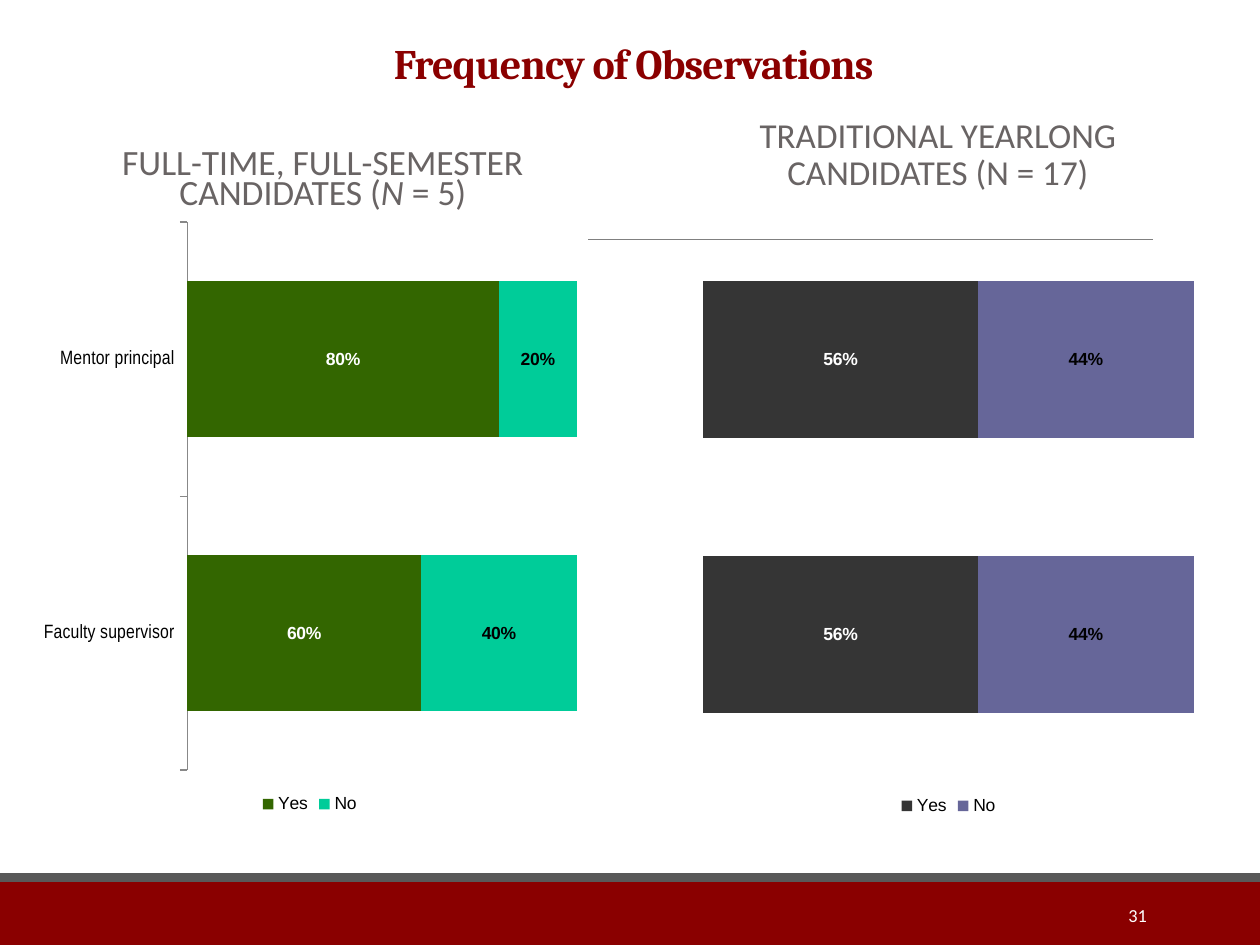
from lxml import etree
from pptx import Presentation
from pptx.chart.data import CategoryChartData
from pptx.dml.color import RGBColor
from pptx.enum.chart import XL_CHART_TYPE, XL_LABEL_POSITION, XL_LEGEND_POSITION, XL_TICK_MARK
from pptx.enum.shapes import MSO_CONNECTOR, MSO_SHAPE
from pptx.enum.text import MSO_ANCHOR, PP_ALIGN
from pptx.oxml import parse_xml
from pptx.oxml.ns import nsdecls, qn
from pptx.util import Pt

BAR = XL_CHART_TYPE.BAR_STACKED_100
MID, LOW = MSO_ANCHOR.MIDDLE, MSO_ANCHOR.BOTTOM
CENTER, RIGHT = PP_ALIGN.CENTER, PP_ALIGN.RIGHT
HEX = {
    "red": "8A0000", "band": "595959", "rule": "808080", "head": "696464",
    "white": "FFFFFF", "black": "000000", "axis": "888888",
    "green": "336600", "mint": "00CC99", "coal": "353535", "violet": "666699",
}
RGB = {name: RGBColor.from_string(code) for name, code in HEX.items()}


def style(font, face, size, color, bold=False):
    font.name, font.size, font.bold = face, Pt(size), bold
    font.color.rgb = RGB[color]


def add_text(box, parts, face, size, color, anchor, align, space=1.0, bold=False):
    """Add a one-paragraph text box; every second part is italic."""
    frame = slide.shapes.add_textbox(*map(Pt, box)).text_frame
    frame.word_wrap = True
    frame.vertical_anchor = anchor
    para = frame.paragraphs[0]
    para.alignment, para.line_spacing = align, space
    style(para.font, face, size, color, bold)
    for i, part in enumerate(parts):
        run = para.add_run()
        run.text = part
        if i % 2:
            run.font.italic = True
    return frame


prs = Presentation()
prs.slide_width, prs.slide_height = Pt(720), Pt(540)
slide = prs.slides.add_slide(prs.slide_layouts[6])

# Footer bands and heading rule
for top, high, color in [(504, 36, "red"), (499, 5, "band")]:
    band = slide.shapes.add_shape(MSO_SHAPE.RECTANGLE, 0, Pt(top), Pt(720), Pt(high))
    band.shadow.inherit = False
    band.fill.solid()
    band.fill.fore_color.rgb = RGB[color]
    band.line.fill.background()
rule = slide.shapes.add_connector(MSO_CONNECTOR.STRAIGHT, Pt(70.5), Pt(137), Pt(659), Pt(137))
rule.line.color.rgb = RGB["rule"]
rule.line.width = Pt(0.5)
etree.SubElement(rule._element.spPr, qn("a:effectLst"))

# Title and headings
title = add_text((65, 22.5, 594, 31.5), ["Frequency of Observations"],
                 "Cambria", 24, "red", LOW, CENTER, 0.85, True)
title.paragraphs[0].runs[0]._r.get_or_add_rPr().set("spc", "-50")
add_text((390, 60, 292, 58), ["TRADITIONAL YEARLONG CANDIDATES (N = 17)"],
         "Calibri", 20, "head", MID, CENTER, 0.9)
left = add_text((36, 60, 297, 72),
                ["FULL-TIME, FULL-SEMESTER CANDIDATES (", "N", "\u00a0=\u00a05)".replace("\u00a0", " ")],
                "Calibri", 20.3, "head", LOW, CENTER, 0.7)
left.margin_bottom = Pt(11)

# Charts: box, plot area as shares of the box, categories, series, axis shown
CHARTS = [
    ((18, 120, 318, 348), (0.28, 0.02, 0.7, 0.9), ["Faculty supervisor", "Mentor principal"],
     [("Yes", (0.6, 0.8), "green", "white"), ("No", (0.4, 0.2), "mint", "black")], True),
    ((396, 120, 292, 349), (0.02, 0.02, 0.96, 0.9), ["1", "2"],
     [("Yes", (0.56, 0.56), "coal", "white"), ("No", (0.44, 0.44), "violet", "black")], False),
]
for box, area, cats, rows, shown in CHARTS:
    data = CategoryChartData(number_format="0%")
    data.categories = cats
    for name, vals, fill, ink in rows:
        data.add_series(name, vals)
    chart = slide.shapes.add_chart(BAR, *map(Pt, box), data).chart
    style(chart.font, "Arial", 9, "black")
    chart.has_title = False
    chart.has_legend = True
    chart.legend.position = XL_LEGEND_POSITION.BOTTOM
    chart.legend.include_in_layout = False
    style(chart.legend.font, "Arial", 10, "black")

    chart.value_axis.visible = False
    chart.value_axis.has_major_gridlines = False
    axis = chart.category_axis
    axis.visible = shown
    if shown:
        axis.major_tick_mark = XL_TICK_MARK.OUTSIDE
        axis.format.line.color.rgb = RGB["axis"]
        axis.format.line.width = Pt(0.75)
        style(axis.tick_labels.font, "Arial Narrow", 11, "black")
        back = parse_xml(
            f'<c:spPr {nsdecls("c", "a")}><a:solidFill><a:srgbClr val="{HEX["white"]}"/>'
            '</a:solidFill><a:ln><a:noFill/></a:ln></c:spPr>')
        chart._chartSpace.chart.addnext(back)

    plot = chart.plots[0]
    plot.gap_width, plot.overlap = 75, 100
    plot.vary_by_categories = False
    for series, (name, vals, fill, ink) in zip(plot.series, rows):
        series.format.fill.solid()
        series.format.fill.fore_color.rgb = RGB[fill]
        labels = series.data_labels
        labels.show_value = True
        labels.position = XL_LABEL_POSITION.CENTER
        labels.number_format, labels.number_format_is_linked = "0%", False
        style(labels.font, "Arial", 10, ink, True)

    field = chart._chartSpace.chart.plotArea
    for old in field.findall(qn("c:layout")):
        field.remove(old)
    sides = "".join(f'<c:{key} val="{val}"/>' for key, val in zip("xywh", area))
    field.insert(0, parse_xml(
        f'<c:layout {nsdecls("c")}><c:manualLayout><c:layoutTarget val="inner"/>'
        f'<c:xMode val="edge"/><c:yMode val="edge"/>{sides}</c:manualLayout></c:layout>'))

add_text((584.5, 508.5, 78, 29), ["31"], "Calibri", 10.5, "white", MID, RIGHT)

prs.save("out.pptx")
